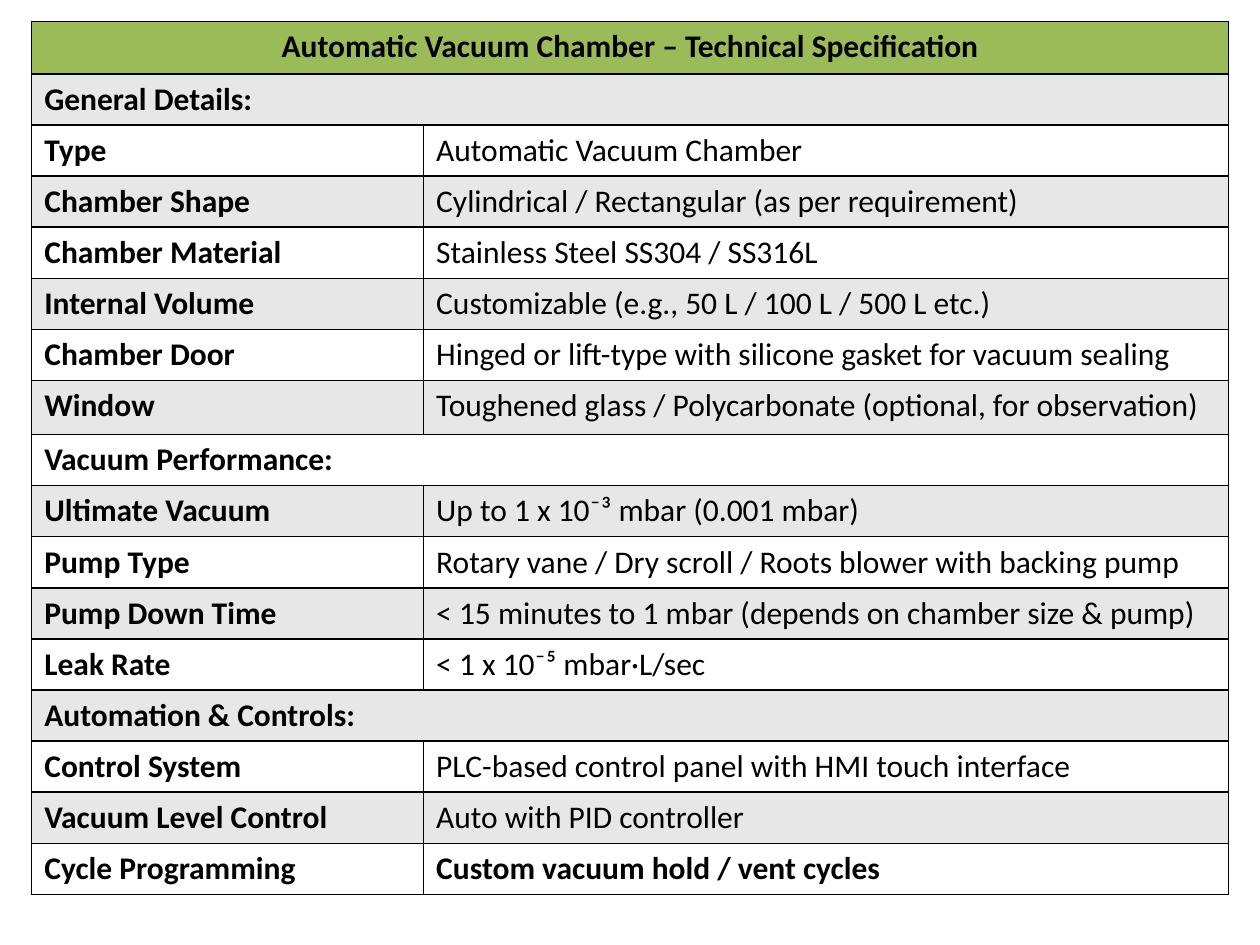
from lxml.etree import SubElement
from pptx import Presentation
from pptx.dml.color import RGBColor
from pptx.enum.text import PP_ALIGN as Align
from pptx.oxml.ns import qn
from pptx.util import Cm, Pt

TITLE = "Automatic Vacuum Chamber – Technical Specification"
SECTIONS = [
    ("General Details:", [
        ("Type", "Automatic Vacuum Chamber"),
        ("Chamber Shape", "Cylindrical / Rectangular (as per requirement)"),
        ("Chamber Material", "Stainless Steel SS304 / SS316L"),
        ("Internal Volume", "Customizable (e.g., 50 L / 100 L / 500 L etc.)"),
        ("Chamber Door", "Hinged or lift-type with silicone gasket for vacuum sealing"),
        ("Window", "Toughened glass / Polycarbonate (optional, for observation)"),
    ]),
    ("Vacuum Performance:", [
        ("Ultimate Vacuum", "Up to 1 x 10⁻³ mbar (0.001 mbar)"),
        ("Pump Type", "Rotary vane / Dry scroll / Roots blower with backing pump"),
        ("Pump Down Time", "< 15 minutes to 1 mbar (depends on chamber size & pump)"),
        ("Leak Rate", "< 1 x 10⁻⁵ mbar·L/sec"),
    ]),
    ("Automation & Controls:", [
        ("Control System", "PLC-based control panel with HMI touch interface"),
        ("Vacuum Level Control", "Auto with PID controller"),
        ("Cycle Programming", "Custom vacuum hold / vent cycles"),
    ]),
]
BOLD_VALUES = {"Cycle Programming"}
GREEN = RGBColor(0x9B, 0xBB, 0x59)
GREY = RGBColor(0xE7, 0xE7, 0xE7)
WHITE = RGBColor(0xFF, 0xFF, 0xFF)
BLACK = RGBColor(0, 0, 0)
COLUMN_WIDTHS = (7.9, 16.23)
ROW_HEIGHT = 1.03
TALLER_ROWS = {TITLE: 1.06, "Window": 1.09}


def add_borders(cell):
    properties = cell._tc.get_or_add_tcPr()
    for position, side in enumerate(("a:lnL", "a:lnR", "a:lnT", "a:lnB")):
        line = SubElement(properties, qn(side), w=str(Pt(1)))
        fill = SubElement(line, qn("a:solidFill"))
        SubElement(fill, qn("a:srgbClr"), val=str(BLACK))
        properties.insert(position, line)


def write(cell, text, bold, align=Align.LEFT):
    paragraph = cell.text_frame.paragraphs[0]
    paragraph.alignment = align
    run = paragraph.add_run()
    run.text = text
    run.font.name = "Calibri"
    run.font.size = Pt(18)
    run.font.bold = bold
    run.font.color.rgb = BLACK


def main():
    rows = [(TITLE, None)]
    for heading, details in SECTIONS:
        rows += [(heading, None), *details]

    prs = Presentation()
    prs.slide_width, prs.slide_height = Cm(25.4), Cm(19.05)
    slide = prs.slides.add_slide(prs.slide_layouts[6])
    heights = [TALLER_ROWS.get(label, ROW_HEIGHT) for label, _ in rows]
    specification = slide.shapes.add_table(
        len(rows), 2, Cm(0.64), Cm(0.43),
        Cm(sum(COLUMN_WIDTHS)), Cm(sum(heights))).table
    for column, width in zip(specification.columns, COLUMN_WIDTHS):
        column.width = Cm(width)

    for index, (label, value) in enumerate(rows):
        specification.rows[index].height = Cm(heights[index])
        label_cell, value_cell = specification.rows[index].cells
        color = GREEN if index == 0 else GREY if index % 2 else WHITE
        for cell in (label_cell, value_cell):
            cell.fill.solid()
            cell.fill.fore_color.rgb = color
            add_borders(cell)
        write(label_cell, label, True, Align.LEFT if index else Align.CENTER)
        if value is None:
            label_cell.merge(value_cell)
        else:
            write(value_cell, value, label in BOLD_VALUES)

    prs.save("out.pptx")


if __name__ == "__main__":
    main()
